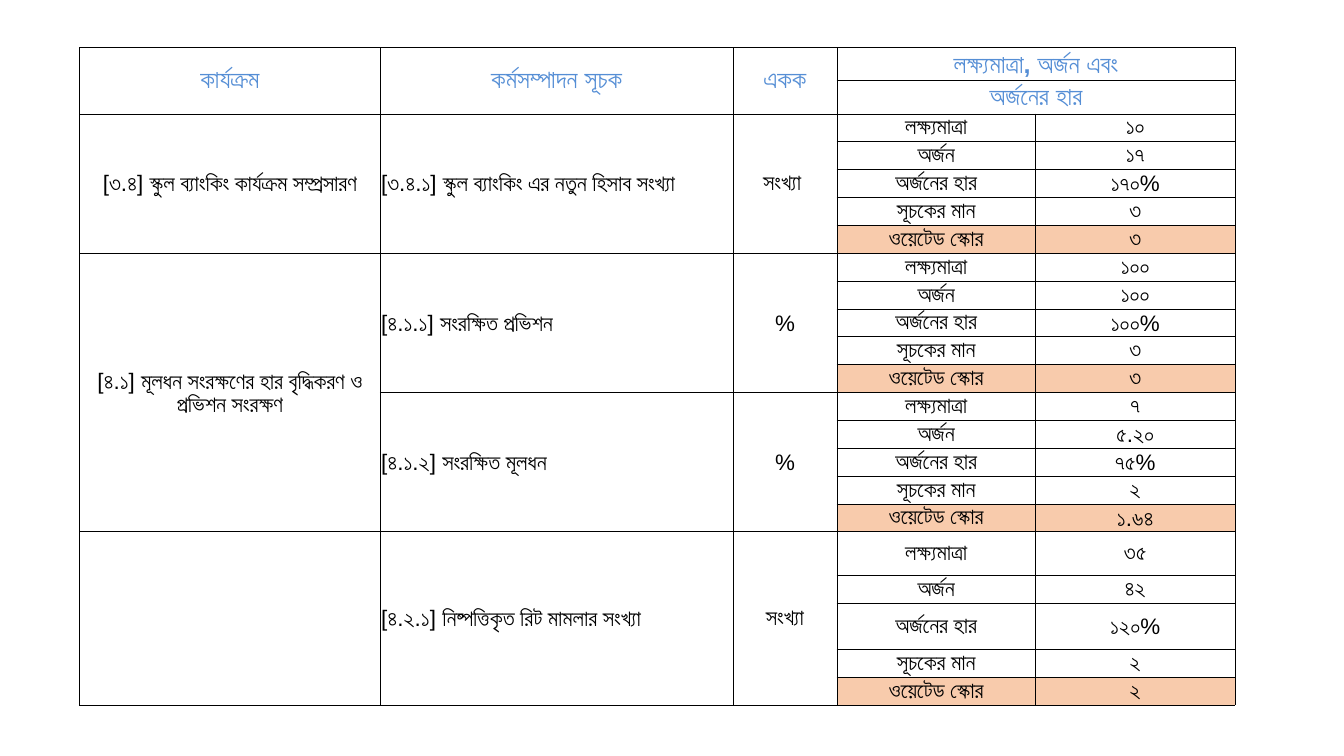
from lxml import etree
from pptx import Presentation
from pptx import util as u
from pptx.dml.color import RGBColor
from pptx.enum import text
from pptx.oxml import ns

COLUMN_WIDTHS = [2.98, 3.5, 1.03, 1.97, 1.98]
TABLE_HEIGHT = 6.53
HEADER_HEIGHT = 0.33
HEADER_ROWS = 2
TALL_ROWS = {17: 0.43, 19: 0.46}

HEADINGS = ["কার্যক্রম", "কর্মসম্পাদন সূচক", "একক"]
RESULT_HEADINGS = ["লক্ষ্যমাত্রা, অর্জন এবং", "অর্জনের হার"]
MEASURES = ["লক্ষ্যমাত্রা", "অর্জন", "অর্জনের হার", "সূচকের মান", "ওয়েটেড স্কোর"]
# Each programme: its name and its indicators (name, unit, values)
PROGRAMMES = [
    ("[৩.৪] স্কুল ব্যাংকিং কার্যক্রম সম্প্রসারণ", [
        ("[৩.৪.১] স্কুল ব্যাংকিং এর নতুন হিসাব সংখ্যা", "সংখ্যা ",
         ["১০", "১৭", "১৭০%", "৩", "৩"])]),
    ("[৪.১] মূলধন সংরক্ষণের হার বৃদ্ধিকরণ ও প্রভিশন সংরক্ষণ", [
        ("[৪.১.১] সংরক্ষিত প্রভিশন", "%", ["১০০", "১০০", "১০০%", "৩", "৩"]),
        ("[৪.১.২] সংরক্ষিত মূলধন", "%", ["৭", "৫.২০", "৭৫%", "২", "১.৬৪"])]),
    ("", [
        ("[৪.২.১] নিষ্পত্তিকৃত রিট মামলার সংখ্যা", "সংখ্যা",
         ["৩৫", "৪২", "১২০%", "২", "২"])]),
]


def colour(hex_code):
    return RGBColor.from_string(hex_code)


class ReportPage:
    """Holds the page, its table and the table's style."""
    font = "Arial"
    ink = "000000"
    heading_ink = "558ED5"
    score_fill = "F8CBAC"
    body_size = 16
    heading_size = 18
    border_width = 0.5

    def __init__(self, deck):
        self.page = deck.slides.add_slide(deck.slide_layouts[6])

    def add_grid(self, left, top, widths, heights):
        frame = self.page.shapes.add_table(
            len(heights), len(widths), u.Inches(left), u.Inches(top),
            u.Inches(sum(widths)), u.Inches(sum(heights)))
        self.table = frame.table
        self.table.first_row = self.table.horz_banding = False
        for column, width in zip(self.table.columns, widths):
            column.width = u.Inches(width)
        for row, height in zip(self.table.rows, heights):
            row.height = u.Inches(height)
        for cell in self.table.iter_cells():
            self.clear_cell(cell)

    def clear_cell(self, cell):
        """Give an empty cell its margins, thin borders and text size."""
        cell.margin_left = cell.margin_right = cell.margin_top = u.Inches(0.01)
        cell.margin_bottom = 0
        cell.vertical_anchor = text.MSO_ANCHOR.MIDDLE
        properties = cell._tc.get_or_add_tcPr()
        for side in "LRTB":
            line = etree.SubElement(properties, ns.qn(f"a:ln{side}"),
                                    w=str(u.Pt(self.border_width)))
            fill = etree.SubElement(line, ns.qn("a:solidFill"))
            etree.SubElement(fill, ns.qn("a:srgbClr"), val=self.ink)
        cell.fill.background()
        end = etree.SubElement(cell.text_frame.paragraphs[0]._p, ns.qn("a:endParaRPr"))
        end.set("sz", str(self.body_size * 100))

    def fill_cell(self, row, column, words, rows=1, columns=1, heading=False,
                  centred=True, fill=None):
        cell = self.table.cell(row, column)
        if rows * columns > 1:
            cell.merge(self.table.cell(row + rows - 1, column + columns - 1))
        if fill:
            cell.fill.solid()
            cell.fill.fore_color.rgb = colour(fill)
        para = cell.text_frame.paragraphs[0]
        para.alignment = text.PP_ALIGN.CENTER if centred else text.PP_ALIGN.LEFT
        if not words:
            return
        para.text = words
        for span in para.runs:
            span.font.name = self.font
            span.font.size = u.Pt(self.heading_size if heading else self.body_size)
            span.font.bold = heading
            span.font.color.rgb = colour(self.heading_ink if heading else self.ink)

    def add_headings(self):
        for column, heading in enumerate(HEADINGS):
            self.fill_cell(0, column, heading, rows=HEADER_ROWS, heading=True)
        for row, heading in enumerate(RESULT_HEADINGS):
            self.fill_cell(row, len(HEADINGS), heading, columns=2, heading=True)

    def add_indicator(self, row, name, unit, values):
        self.fill_cell(row, 1, name, rows=len(MEASURES), centred=False)
        self.fill_cell(row, 2, unit, rows=len(MEASURES))
        for offset, (measure, value) in enumerate(zip(MEASURES, values)):
            fill = self.score_fill if measure == MEASURES[-1] else None
            self.fill_cell(row + offset, 3, measure, fill=fill)
            self.fill_cell(row + offset, 4, value, fill=fill)


def row_heights():
    """Share the height left by the header and tall rows equally."""
    count = HEADER_ROWS + len(MEASURES) * sum(len(items) for _, items in PROGRAMMES)
    fixed = dict.fromkeys(range(HEADER_ROWS), HEADER_HEIGHT) | TALL_ROWS
    regular = (TABLE_HEIGHT - sum(fixed.values())) / (count - len(fixed))
    return [fixed.get(row, regular) for row in range(count)]


def main():
    deck = Presentation()
    deck.slide_width, deck.slide_height = u.Inches(13.33), u.Inches(7.5)
    report = ReportPage(deck)
    report.add_grid(0.79, 0.47, COLUMN_WIDTHS, row_heights())
    report.add_headings()
    row = HEADER_ROWS
    for programme, indicators in PROGRAMMES:
        report.fill_cell(row, 0, programme, rows=len(MEASURES) * len(indicators))
        for name, unit, values in indicators:
            report.add_indicator(row, name, unit, values)
            row += len(MEASURES)
    deck.save("out.pptx")


if __name__ == "__main__":
    main()
